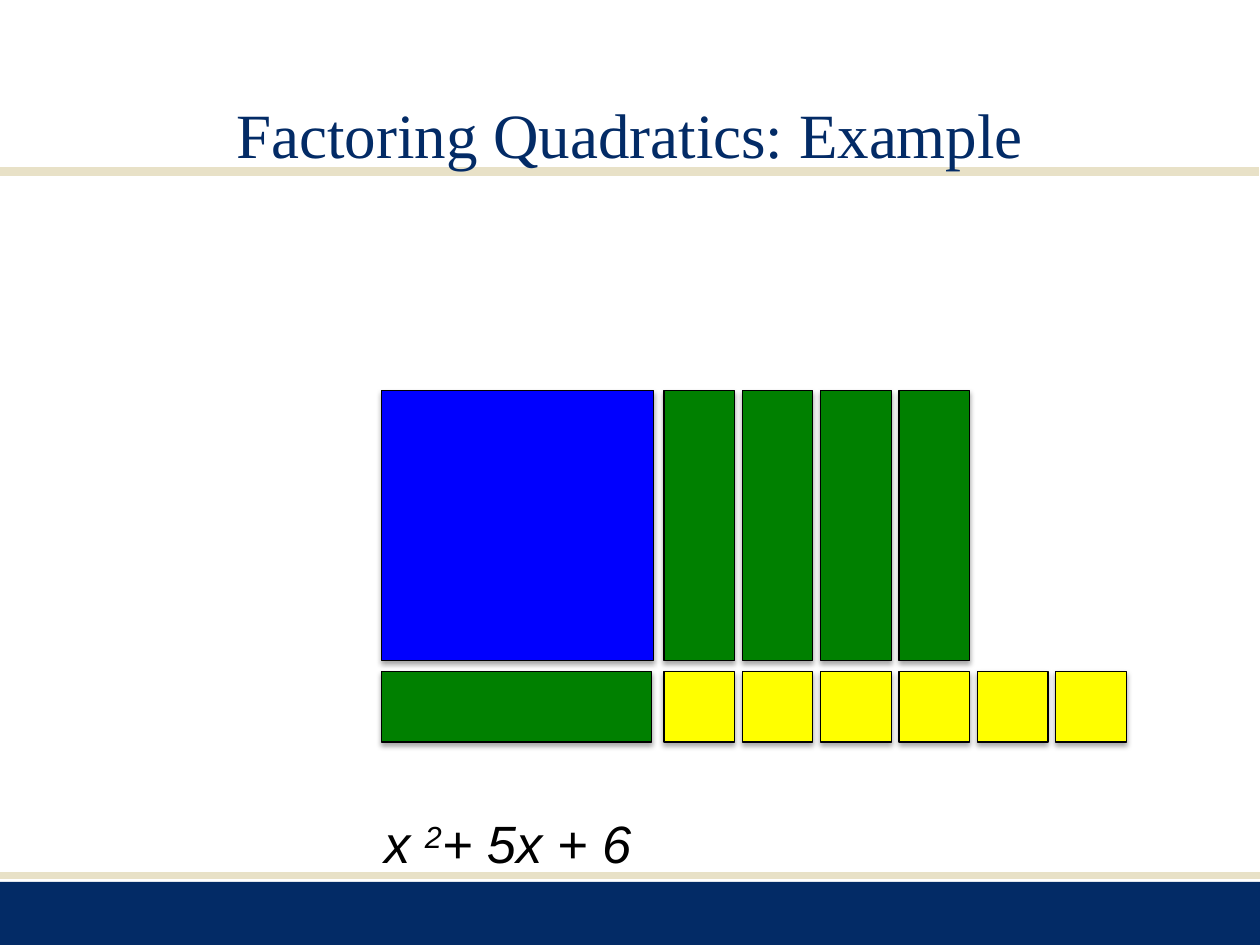
from dataclasses import dataclass

from pptx import Presentation
from pptx import util as u
from pptx.dml.color import RGBColor
from pptx.enum import shapes, text
from pptx.oxml import parse_xml
from pptx.oxml.ns import nsdecls, qn

Inches = u.Inches


@dataclass(frozen=True)
class Theme:
    navy: str = "032B66"
    sand: str = "E8E1C7"
    blue: str = "0000FF"
    green: str = "008000"
    yellow: str = "FFFF00"
    black: str = "000000"
    title_font: str = "Times New Roman"
    body_font: str = "Arial"
    title_size: int = 36
    formula_size: int = 30
    outline: float = 0.75


class Page:
    def __init__(self, deck, theme):
        self.theme = theme
        self.slide = deck.slides.add_slide(deck.slide_layouts[6])

    def rectangle(self, left, top, width, height, fill):
        box = self.slide.shapes.add_shape(
            shapes.MSO_SHAPE.RECTANGLE,
            Inches(left), Inches(top), Inches(width), Inches(height))
        box.shadow.inherit = False
        box.fill.solid()
        box.fill.fore_color.rgb = RGBColor.from_string(fill)
        box.line.fill.background()
        return box

    def tile(self, left, top, width, height, fill):
        """Add an outlined algebra tile with a soft shadow below it."""
        box = self.rectangle(left, top, width, height, fill)
        box.line.color.rgb = RGBColor.from_string(self.theme.black)
        box.line.width = u.Pt(self.theme.outline)
        box._element.spPr.find(qn("a:effectLst")).append(parse_xml(
            f'<a:outerShdw {nsdecls("a")} blurRad="{u.Pt(3.1)}" dist="{u.Pt(1.8)}" '
            f'dir="5400000" rotWithShape="0"><a:srgbClr val="{self.theme.black}">'
            '<a:alpha val="35000"/></a:srgbClr></a:outerShdw>'))

    def rule(self, left, top, width, weight):
        line = self.slide.shapes.add_connector(
            shapes.MSO_CONNECTOR.STRAIGHT,
            Inches(left), Inches(top), Inches(left + width), Inches(top))
        line.line.color.rgb = RGBColor.from_string(self.theme.sand)
        line.line.width = u.Pt(weight)
        line._element.spPr.append(parse_xml(f'<a:effectLst {nsdecls("a")}/>'))

    def text(self, left, top, width, height, spans, style, anchor, align):
        """Write one paragraph from (words, baseline percent) pairs."""
        box = self.slide.shapes.add_textbox(
            Inches(left), Inches(top), Inches(width), Inches(height))
        frame = box.text_frame
        frame.word_wrap = True
        frame.vertical_anchor = anchor
        para = frame.paragraphs[0]
        para.alignment = align
        for words, baseline in spans:
            span = para.add_run()
            span.text = words
            for name, value in style.items():
                setattr(span.font, name, value)
            span.font.color.rgb = RGBColor.from_string(
                self.theme.navy if style["name"] == self.theme.title_font
                else self.theme.black)
            if baseline:
                span._r.get_or_add_rPr().set("baseline", str(baseline * 1000))


def main():
    theme = Theme()
    deck = Presentation()
    deck.slide_width, deck.slide_height = Inches(10), Inches(7.5)
    page = Page(deck, theme)

    page.rectangle(0, 7, 10, 0.5, theme.navy)
    page.rule(0, 6.95, 10, 4)
    page.rule(-0.01, 1.36, 10, 5)
    page.text(0, 0.42, 10, 1.27, [("Factoring Quadratics: Example", 0)],
              {"name": theme.title_font, "size": u.Pt(theme.title_size)},
              text.MSO_ANCHOR.MIDDLE, text.PP_ALIGN.CENTER)

    x_side, unit = 2.14, 0.56
    square_left, strip_left, pitch = 3.03, 5.27, 0.622
    upper, lower = 3.1, 5.33
    page.tile(square_left, upper, 2.16, x_side, theme.blue)
    page.tile(square_left, lower, x_side, unit, theme.green)
    for column in range(4):
        page.tile(strip_left + column * pitch, upper, unit, x_side, theme.green)
    for column in range(6):
        page.tile(strip_left + column * pitch, lower, unit, unit, theme.yellow)

    page.text(2.95, 6.39, 2.52, 0.94, [("x ", 0), ("2", 30), ("+ 5x + 6", 0)],
              {"name": theme.body_font, "size": u.Pt(theme.formula_size),
               "italic": True},
              text.MSO_ANCHOR.TOP, text.PP_ALIGN.LEFT)

    deck.save("out.pptx")


if __name__ == "__main__":
    main()
